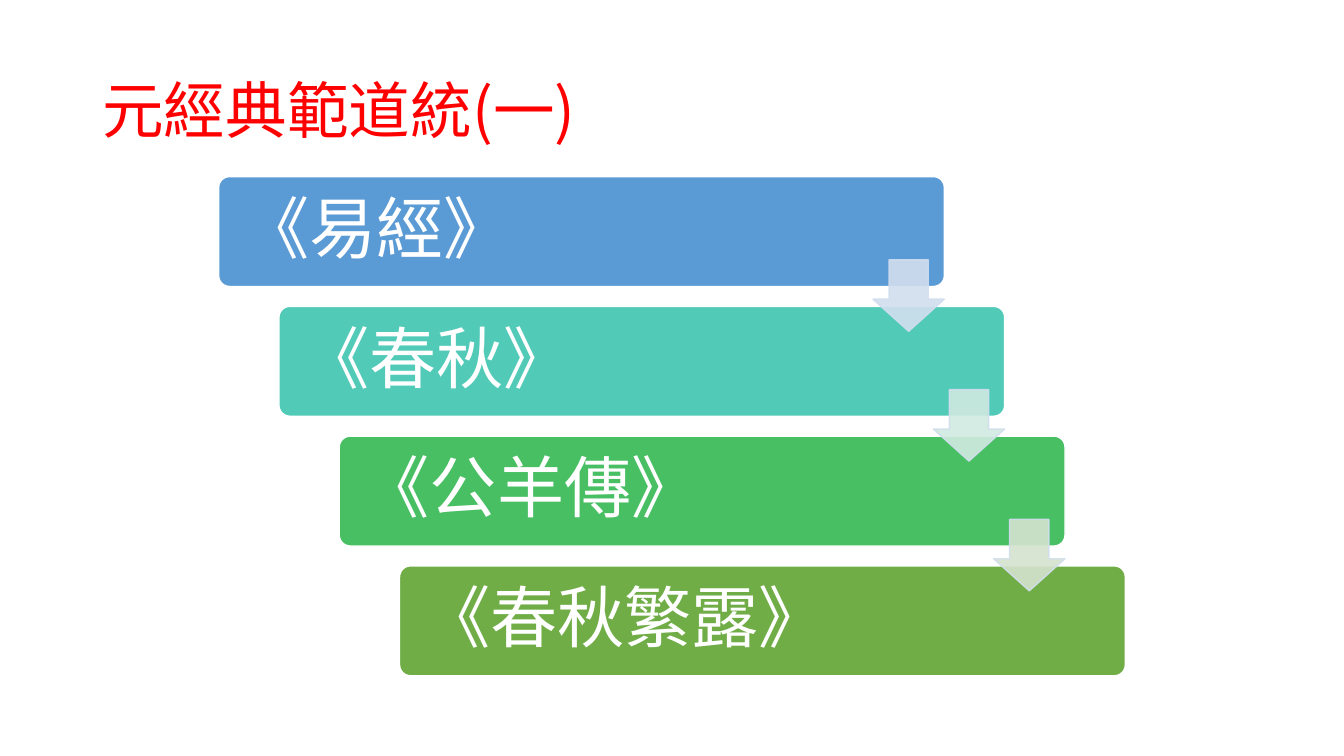
from dataclasses import dataclass

from lxml.etree import SubElement
from pptx import Presentation
from pptx.dml.color import RGBColor
from pptx.enum.shapes import MSO_SHAPE
from pptx.enum.text import MSO_ANCHOR, PP_ALIGN
from pptx.oxml.ns import qn
from pptx.util import Cm, Pt

FONT = "Noto Sans CJK SC"
STEP_X, STEP_Y = 1.52, 3.27
BAR_LEFT, BAR_TOP, BAR_WIDTH, BAR_HEIGHT = 5.51, 4.45, 18.29, 2.77
ARROW_LEFT, ARROW_TOP, ARROW_SIZE = 22.0, 6.55, 1.8


@dataclass
class Classic:
    name: str
    color: str


@dataclass
class Arrow:
    fill: str
    line: str = "D2DEEF"
    opacity: int = 90


CLASSICS = [
    Classic("《易經》", "5B9BD5"),
    Classic("《春秋》", "52CAB8"),
    Classic("《公羊傳》", "49BF64"),
    Classic("《春秋繁露》", "70AD47"),
]
ARROWS = [Arrow("D2DEEF"), Arrow("D0EAE1"), Arrow("D5E3CF")]


def rgb(color: str) -> RGBColor:
    return RGBColor.from_string(color)


def write(box, text: str, size: int, color: str, inset_x: float, inset_y: float) -> None:
    frame = box.text_frame
    frame.text = text
    frame.word_wrap = True
    frame.vertical_anchor = MSO_ANCHOR.MIDDLE
    frame.margin_left = frame.margin_right = Cm(inset_x)
    frame.margin_top = frame.margin_bottom = Cm(inset_y)
    para = frame.paragraphs[0]
    para.alignment = PP_ALIGN.LEFT
    para.line_spacing = 0.9
    font = para.runs[0].font
    font.size = Pt(size)
    font.name = FONT
    font.color.rgb = rgb(color)
    # East Asian glyphs take their own typeface entry
    SubElement(font._element, qn("a:ea"), typeface=FONT)


def paint(shape, fill: str, line: str) -> None:
    shape.shadow.inherit = False
    shape.fill.solid()
    shape.fill.fore_color.rgb = rgb(fill)
    shape.line.color.rgb = rgb(line)
    shape.line.width = Pt(1)


def draw_classic(page, classic: Classic, index: int) -> None:
    bar = page.shapes.add_shape(
        MSO_SHAPE.ROUNDED_RECTANGLE,
        Cm(BAR_LEFT + index * STEP_X), Cm(BAR_TOP + index * STEP_Y),
        Cm(BAR_WIDTH), Cm(BAR_HEIGHT))
    bar.adjustments[0] = 0.1
    paint(bar, classic.color, "FFFFFF")
    write(bar, classic.name, 48, "FFFFFF", 0.51, 0.51)


def draw_arrow(page, arrow: Arrow, index: int) -> None:
    shape = page.shapes.add_shape(
        MSO_SHAPE.DOWN_ARROW,
        Cm(ARROW_LEFT + index * STEP_X), Cm(ARROW_TOP + index * STEP_Y),
        Cm(ARROW_SIZE), Cm(ARROW_SIZE))
    shape.adjustments[0] = 0.55
    shape.adjustments[1] = 0.45
    paint(shape, arrow.fill, arrow.line)
    # Transparency of fill and outline
    for color in shape._element.spPr.iter(qn("a:srgbClr")):
        SubElement(color, qn("a:alpha"), val=str(arrow.opacity * 1000))


def main() -> None:
    deck = Presentation()
    deck.slide_width, deck.slide_height = Cm(33.87), Cm(19.05)
    page = deck.slides.add_slide(deck.slide_layouts[6])

    # Title
    title = page.shapes.add_textbox(Cm(2.33), Cm(1.01), Cm(29.21), Cm(3.68))
    write(title, "元經典範道統(一)", 44, "FF0000", 0.25, 0.13)

    # Staircase of classics, then the arrows on top
    for index, classic in enumerate(CLASSICS):
        draw_classic(page, classic, index)
    for index, arrow in enumerate(ARROWS):
        draw_arrow(page, arrow, index)

    deck.save("out.pptx")


if __name__ == "__main__":
    main()
